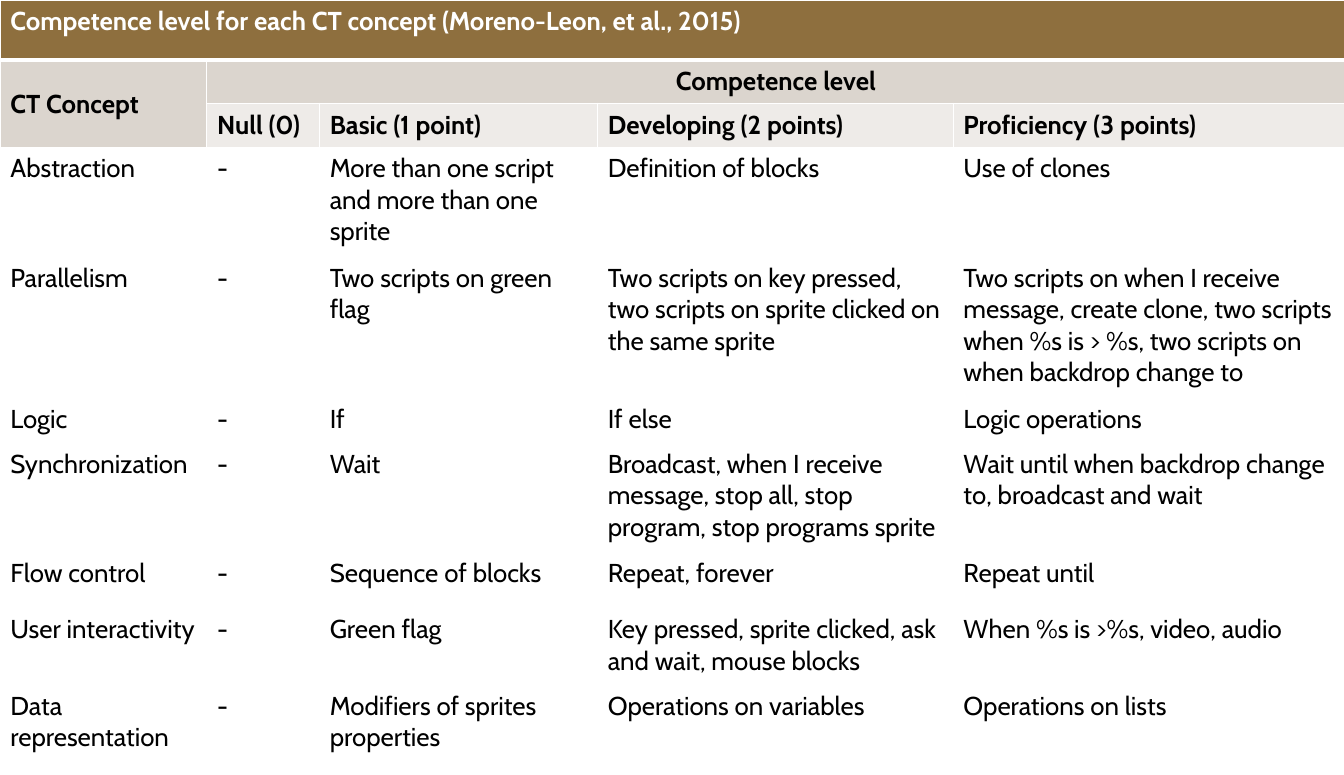
from lxml.etree import SubElement
from pptx import Presentation
from pptx.dml.color import RGBColor
from pptx.enum.text import MSO_ANCHOR, PP_ALIGN
from pptx.oxml.ns import qn
from pptx.util import Inches, Pt

BROWN = RGBColor(0x8E, 0x6F, 0x3E)
TAUPE = RGBColor(0xDB, 0xD5, 0xCE)
PALE = RGBColor(0xEE, 0xEB, 0xE8)
WHITE = RGBColor(0xFF, 0xFF, 0xFF)
BLACK = RGBColor(0, 0, 0)

COLUMN_WIDTHS = [2, 1.09, 2.69, 3.44, 3.79]
ROW_HEIGHTS = [0.58, 0.42, 0.43, 1.06, 1.37, 0.43, 1.06, 0.54, 0.74, 1.04]
HEADER_ROWS = 3

ROWS = [
    ["Competence level for each CT concept (Moreno-Leon, et al., 2015)", "", "", "", ""],
    ["CT Concept", "Competence level", "", "", ""],
    ["", "Null (0)", "Basic (1 point)", "Developing (2 points)", "Proficiency (3 points)"],
    ["Abstraction", "-", "More than one script and more than one sprite",
     "Definition of blocks", "Use of clones"],
    ["Parallelism", "-", "Two scripts on green flag",
     "Two scripts on key pressed, two scripts on sprite clicked on the same sprite",
     "Two scripts on when I receive message, create clone, two scripts "
     "when %s is > %s, two scripts on when backdrop change to"],
    ["Logic", "-", "If", "If else", "Logic operations"],
    ["Synchronization", "-", "Wait",
     "Broadcast, when I receive message, stop all, stop program, stop programs sprite",
     "Wait until when backdrop change to, broadcast and wait"],
    ["Flow control", "-", "Sequence of blocks", "Repeat, forever", "Repeat until"],
    ["User interactivity", "-", "Green flag",
     "Key pressed, sprite clicked, ask and wait, mouse blocks",
     "When %s is >%s, video, audio"],
    ["Data representation", "-", "Modifiers of sprites properties",
     "Operations on variables", "Operations on lists"],
]


def set_borders(cell, bottom, top):
    """Draw white borders; bottom and top are widths in points."""
    properties = cell._tc.get_or_add_tcPr()
    for tag, width in (("a:lnL", 1), ("a:lnR", 1), ("a:lnT", top), ("a:lnB", bottom)):
        line = SubElement(properties, qn(tag), w=str(Pt(width)))
        fill = SubElement(line, qn("a:solidFill"))
        SubElement(fill, qn("a:srgbClr"), val=str(WHITE))


presentation = Presentation()
presentation.slide_width = Inches(13)
presentation.slide_height = Inches(7.5)
slide = presentation.slides.add_slide(presentation.slide_layouts[6])

table = slide.shapes.add_table(
    len(ROWS), len(COLUMN_WIDTHS), 0, 0,
    Inches(sum(COLUMN_WIDTHS)), Inches(sum(ROW_HEIGHTS))).table
table.first_row = False
table.horz_banding = False
for column, width in zip(table.columns, COLUMN_WIDTHS):
    column.width = Inches(width)
for row, height in zip(table.rows, ROW_HEIGHTS):
    row.height = Inches(height)

table.cell(0, 0).merge(table.cell(0, 4))
table.cell(1, 0).merge(table.cell(2, 0))
table.cell(1, 1).merge(table.cell(1, 4))

for r, texts in enumerate(ROWS):
    for c, text in enumerate(texts):
        cell = table.cell(r, c)
        set_borders(cell, bottom=3 if r == 0 else 1, top=3 if r == 1 else 1)
        if r == 0:
            color = BROWN
        elif r == 1 or (r == 2 and c == 0):
            color = TAUPE
        else:
            color = PALE if r == 2 else WHITE
        cell.fill.solid()
        cell.fill.fore_color.rgb = color
        if r in (1, 2):
            cell.vertical_anchor = MSO_ANCHOR.MIDDLE

        cell.text = text
        paragraph = cell.text_frame.paragraphs[0]
        paragraph.font.name = "Cabin"
        paragraph.font.size = Pt(18)
        paragraph.font.bold = r < HEADER_ROWS
        paragraph.font.color.rgb = WHITE if r == 0 else BLACK

table.cell(1, 1).text_frame.paragraphs[0].alignment = PP_ALIGN.CENTER

presentation.save("out.pptx")
